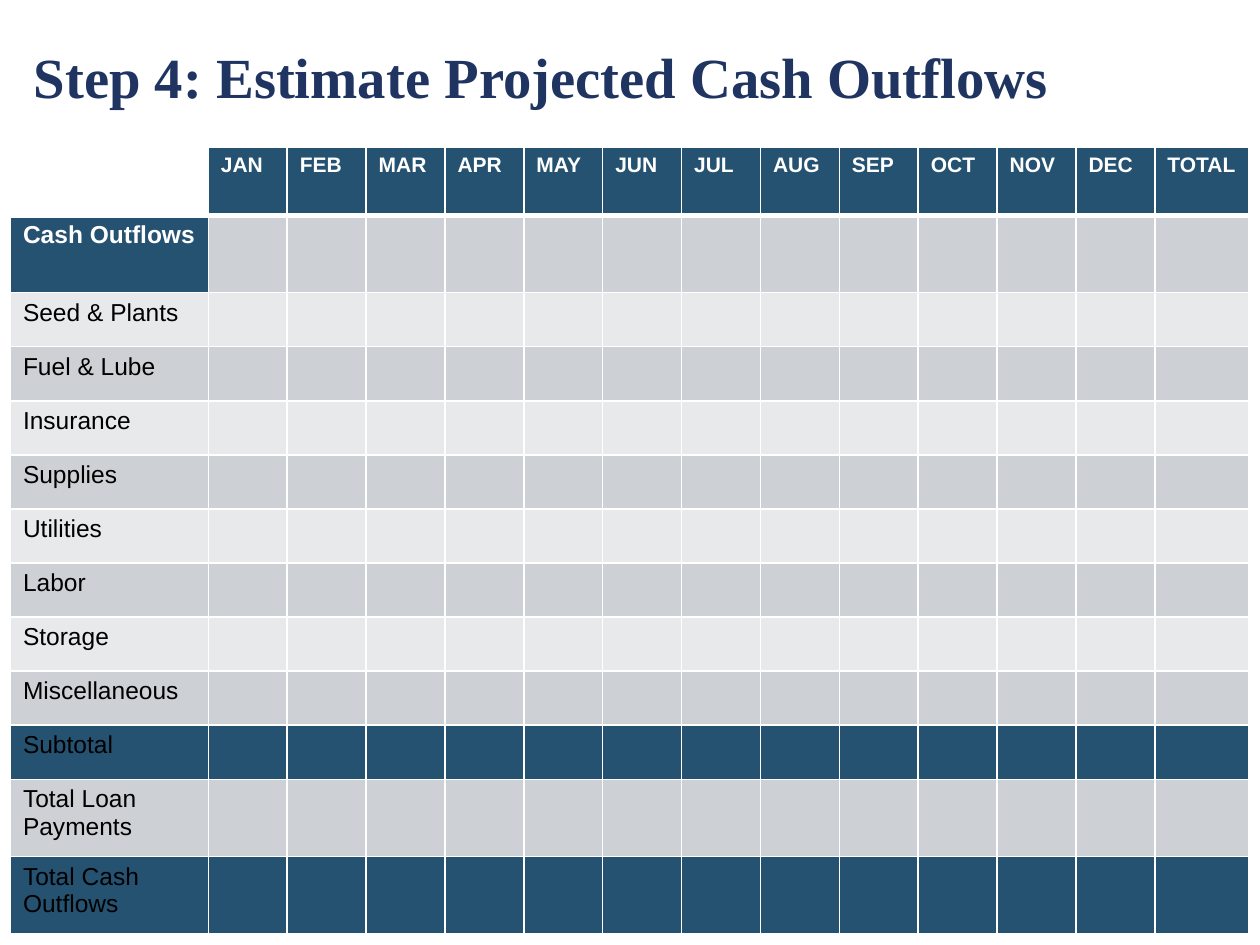
from lxml import etree
from pptx import Presentation
from pptx.dml.color import RGBColor
from pptx.enum.text import MSO_ANCHOR
from pptx.oxml.ns import qn
from pptx.util import Cm, Pt

MIDDLE = MSO_ANCHOR.MIDDLE

WHITE = RGBColor(0xFF, 0xFF, 0xFF)
BLACK = RGBColor(0x00, 0x00, 0x00)
NAVY = RGBColor(0x1F, 0x34, 0x61)
TEAL = RGBColor(0x26, 0x52, 0x72)
GREY = RGBColor(0xCD, 0xD1, 0xD5)
PALE = RGBColor(0xE8, 0xE9, 0xEB)

HEADINGS = ["", "JAN", "FEB", "MAR", "APR", "MAY", "JUN", "JUL", "AUG",
            "SEP", "OCT", "NOV", "DEC", "TOTAL"]
OUTFLOWS = ["Cash Outflows", "Seed & Plants", "Fuel & Lube", "Insurance",
            "Supplies", "Utilities", "Labor", "Storage", "Miscellaneous",
            "Subtotal", "Total Loan Payments", "Total Cash Outflows"]
TOTALS = {"Subtotal", "Total Cash Outflows"}
TALL_ROWS = {"Cash Outflows", "Total Loan Payments", "Total Cash Outflows"}

LABEL_WIDTH, MONTH_WIDTH, TOTAL_WIDTH = 3.99, 1.59, 1.9
HEADER_HEIGHT, TALL_HEIGHT, ROW_HEIGHT = 1.37, 1.56, 1.09
THIN, THICK = 1, 3


def add_span(para, text, font, size, color, bold):
    span = para.add_run()
    span.text = text
    span.font.name = font
    span.font.size = Pt(size)
    span.font.color.rgb = color
    span.font.bold = bold


def set_borders(cell, top, bottom):
    """Draw white lines round a cell; widths are in points."""
    properties = cell._tc.get_or_add_tcPr()
    for side, width in (("L", THIN), ("R", THIN), ("T", top), ("B", bottom)):
        line = etree.SubElement(properties, qn(f"a:ln{side}"), w=str(Pt(width)))
        fill = etree.SubElement(line, qn("a:solidFill"))
        etree.SubElement(fill, qn("a:srgbClr"), val=str(WHITE))


def add_title(page, left, top, width, height):
    box = page.shapes.add_textbox(Cm(left), Cm(top), Cm(width), Cm(height))
    frame = box.text_frame
    frame.word_wrap = True
    frame.vertical_anchor = MIDDLE
    add_span(frame.paragraphs[0], "Step 4: Estimate Projected Cash Outflows",
             "Times New Roman", 32.4, NAVY, True)


def cell_color(row, column, label):
    if row == 0:
        return TEAL if column else WHITE
    if label in TOTALS or (row == 1 and column == 0):
        return TEAL
    return GREY if row % 2 else PALE


def add_outflow_table(page, left, top):
    widths = [LABEL_WIDTH] + [MONTH_WIDTH] * 12 + [TOTAL_WIDTH]
    heights = [HEADER_HEIGHT] + [
        TALL_HEIGHT if label in TALL_ROWS else ROW_HEIGHT for label in OUTFLOWS]
    table = page.shapes.add_table(
        len(heights), len(widths), Cm(left), Cm(top),
        Cm(sum(widths)), Cm(sum(heights))).table
    for column, width in zip(table.columns, widths):
        column.width = Cm(width)

    for r, (label, height) in enumerate(zip([""] + OUTFLOWS, heights)):
        table.rows[r].height = Cm(height)
        for c, heading in enumerate(HEADINGS):
            cell = table.cell(r, c)
            cell.margin_right = Cm(0.2)
            set_borders(cell, THICK if r == 1 else THIN,
                        THICK if r == 0 else THIN)
            cell.fill.solid()
            cell.fill.fore_color.rgb = cell_color(r, c, label)
            # Month headings run along the top, outflow names down the side
            text = heading if r == 0 else label if c == 0 else ""
            if text:
                strong = r <= 1
                add_span(cell.text_frame.paragraphs[0], text, "Arial",
                         12 if r == 0 else 14, WHITE if strong else BLACK, strong)


def main():
    deck = Presentation()
    deck.slide_width, deck.slide_height = Cm(25.4), Cm(19.05)
    page = deck.slides.add_slide(deck.slide_layouts[6])
    add_title(page, 0.43, 0.43, 22.23, 2.21)
    add_outflow_table(page, 0.21, 2.97)
    deck.save("out.pptx")


if __name__ == "__main__":
    main()
